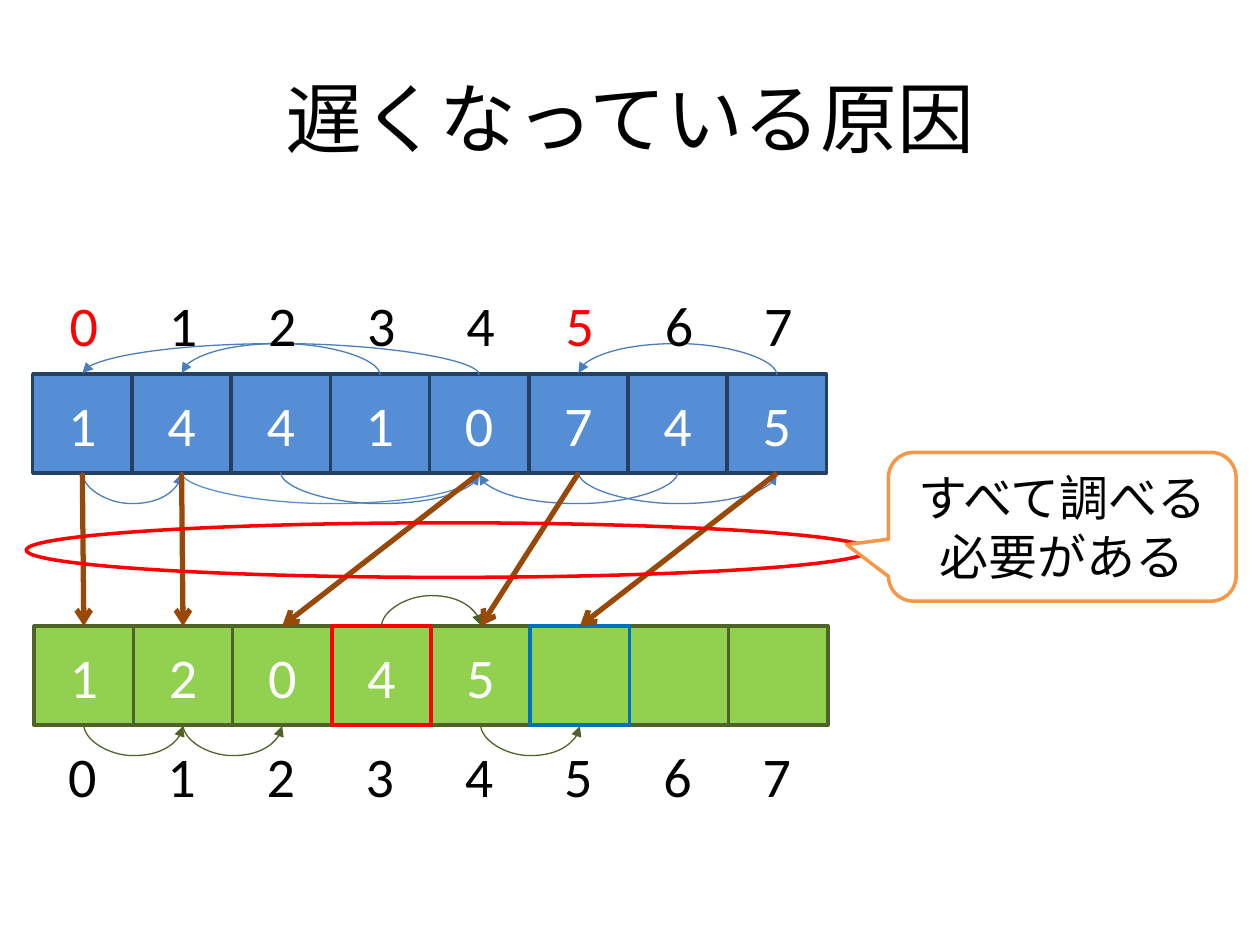
from lxml import etree
from pptx import Presentation
from pptx import util as u
from pptx.dml.color import RGBColor
from pptx.enum import shapes, text
from pptx.oxml.ns import qn

TITLE = "遅くなっている原因"
CALLOUT = ["すべて調べる", "必要がある"]
COLORS = {
    "black": "000000", "white": "FFFFFF", "red": "FF0000", "blue": "0070C0",
    "cell_blue": "558ED5", "edge_blue": "254061", "arc_blue": "4B7EBC",
    "cell_green": "92D050", "edge_green": "4F6228",
    "brown": "984807", "orange": "F79646",
}
UPPER = ["1", "4", "4", "1", "0", "7", "4", "5"]
LOWER = ["1", "2", "0", "4", "5", "", "", ""]
LOWER_EDGES = {3: "red", 5: "blue"}
RED_INDICES = {0, 5}
UPPER_ARCS = [
    (0, 1, "below", "arc_blue"), (1, 4, "below", "cell_blue"),
    (2, 4, "below", "arc_blue"), (3, 1, "above", "arc_blue"),
    (4, 0, "above", "arc_blue"), (5, 7, "below", "arc_blue"),
    (6, 4, "below", "arc_blue"), (7, 5, "above", "arc_blue"),
]
LOWER_ARCS = [
    (0, 1, "below", "edge_green"), (1, 2, "below", "edge_green"),
    (3, 4, "above", "edge_green"), (4, 5, "below", "edge_green"),
]
MAPPING = [(0, 0), (1, 1), (4, 2), (5, 4), (7, 5)]

CELL = 2
UPPER_LEFT, UPPER_TOP = 0.66, 7.54
LOWER_LEFT, LOWER_TOP = 0.69, 12.62
ARC_DEPTH = 18


def rgb(name):
    return RGBColor.from_string(COLORS[name])


def write(shape, lines, size=32, color="black"):
    frame = shape.text_frame
    frame.word_wrap = True
    frame.vertical_anchor = text.MSO_ANCHOR.MIDDLE
    for number, line in enumerate(lines):
        para = frame.add_paragraph() if number else frame.paragraphs[0]
        para.alignment = text.PP_ALIGN.CENTER
        span = para.add_run()
        span.text = line
        span.font.size = u.Pt(size)
        span.font.name = "Calibri"
        span.font.color.rgb = rgb(color)


def add_shape(page, kind, place, fill, edge):
    shape = page.shapes.add_shape(kind, *map(u.Cm, place))
    shape.shadow.inherit = False
    if fill:
        shape.fill.solid()
        shape.fill.fore_color.rgb = rgb(fill)
    else:
        shape.fill.background()
    shape.line.color.rgb = rgb(edge)
    shape.line.width = u.Pt(2)
    return shape


def add_cells(page, values, left, top, fill, edge, special):
    cells = {}
    for index in sorted(range(len(values)), key=lambda i: i in special):
        place = (left + index * CELL, top, CELL, CELL)
        box = add_shape(page, shapes.MSO_SHAPE.RECTANGLE, place, fill, special.get(index, edge))
        if values[index]:
            write(box, [values[index]], color="white")
        cells[index] = box
    return cells


def add_indices(page, left, top, red):
    for index in range(len(UPPER)):
        place = (left + index * CELL, top, CELL, CELL)
        box = page.shapes.add_textbox(*map(u.Cm, place))
        write(box, [str(index)], color="red" if index in red else "black")


def connect(page, kind, start, start_side, end, end_side, color, width, head):
    connector = page.shapes.add_connector(kind, 0, 0, 0, 0)
    connector.begin_connect(start, start_side)
    connector.end_connect(end, end_side)
    connector.line.color.rgb = rgb(color)
    connector.line.width = u.Pt(width)
    properties = connector._element.spPr
    etree.SubElement(properties.find(qn("a:ln")), qn("a:tailEnd"), type=head)
    etree.SubElement(properties, qn("a:effectLst"))
    return connector


def add_arc(page, start, end, side, color):
    site = 2 if side == "below" else 0
    arc = connect(page, shapes.MSO_CONNECTOR.CURVE, start, site, end, site, color, 0.75, "triangle")
    rightward = end.left > start.left
    below = side == "below"
    reach = abs(end.left - start.left)
    middle = (start.left + end.left + start.width) // 2
    level = start.top + (start.height if below else 0)
    thickness = u.Pt(1)
    arc.left, arc.top = middle - thickness // 2, level - reach // 2
    arc.width, arc.height = thickness, reach

    properties = arc._element.spPr
    frame = properties.find(qn("a:xfrm"))
    turned = rightward == below
    frame.set("rot", str((270 if turned or not below else 90) * 60000))
    if not below and rightward:
        frame.set("rot", str(90 * 60000))
    frame.set("flipH", str(int(rightward)))
    frame.set("flipV", str(int(not below)))
    guides = properties.find(qn("a:prstGeom")).find(qn("a:avLst"))
    etree.SubElement(guides, qn("a:gd"), name="adj1", fmla=f"val {ARC_DEPTH * 100000}")


def main():
    deck = Presentation()
    deck.slide_width, deck.slide_height = u.Cm(25.4), u.Cm(19.05)
    page = deck.slides.add_slide(deck.slide_layouts[5])

    title = page.shapes.title
    title.left, title.top, title.width, title.height = map(u.Cm, (1.27, 0.76, 22.86, 3.18))
    write(title, [TITLE], size=44)

    upper = add_cells(page, UPPER, UPPER_LEFT, UPPER_TOP, "cell_blue", "edge_blue", {})
    lower = add_cells(page, LOWER, LOWER_LEFT, LOWER_TOP, "cell_green", "edge_green", LOWER_EDGES)
    for cells, arcs in ((upper, UPPER_ARCS), (lower, LOWER_ARCS)):
        for start, end, side, color in arcs:
            add_arc(page, cells[start], cells[end], side, color)
    for source, target in MAPPING:
        connect(page, shapes.MSO_CONNECTOR.STRAIGHT, upper[source], 2, lower[target], 0,
                "brown", 3, "arrow")
    add_indices(page, LOWER_LEFT, UPPER_TOP - CELL, RED_INDICES)
    add_indices(page, UPPER_LEFT, LOWER_TOP + CELL, set())

    add_shape(page, shapes.MSO_SHAPE.OVAL, (0.53, 10.54, 17, 1.1), None, "red")
    callout = add_shape(page, shapes.MSO_SHAPE.ROUNDED_RECTANGULAR_CALLOUT,
                        (17.91, 9.12, 7.01, 3), "white", "orange")
    callout.adjustments[0] = -0.62
    callout.adjustments[1] = 0.12
    callout.adjustments[2] = 0.17
    write(callout, CALLOUT, size=28)
    deck.save("out.pptx")


if __name__ == "__main__":
    main()
